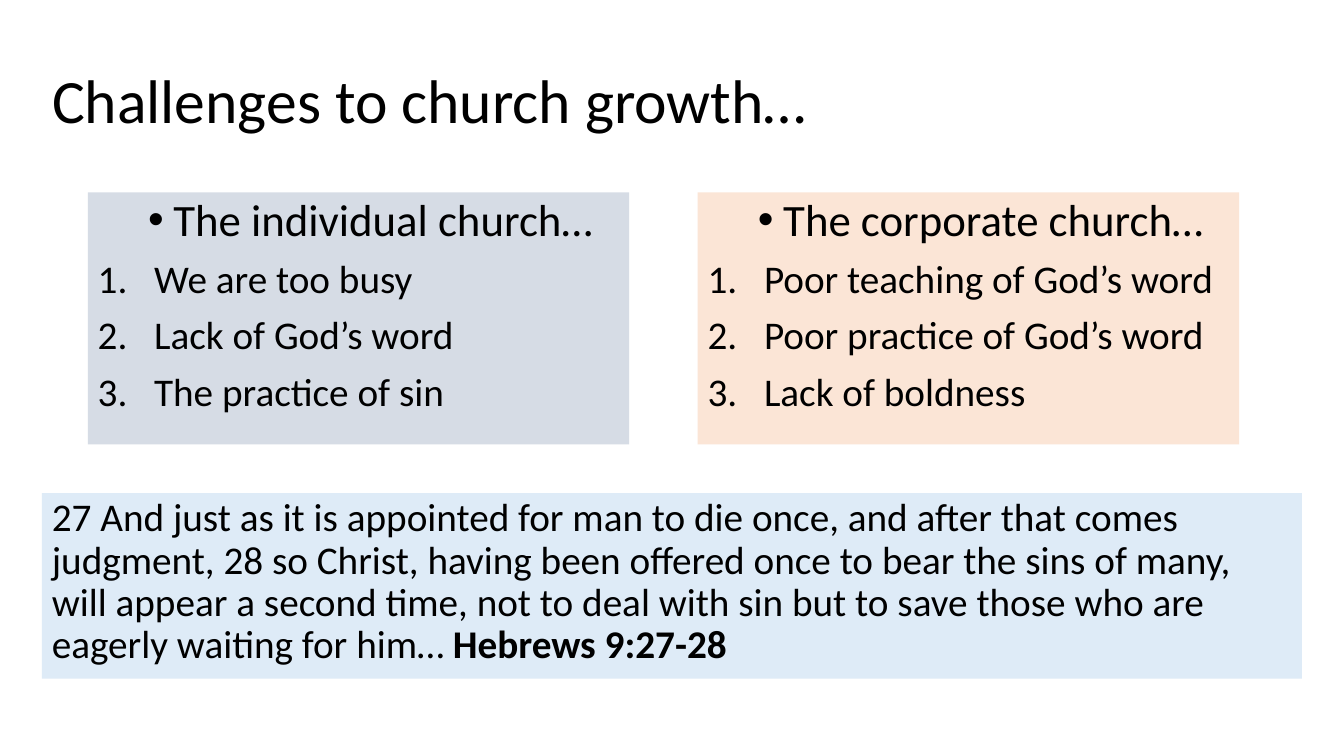
from dataclasses import dataclass

from lxml import etree
from pptx import Presentation
from pptx import util as u
from pptx.dml.color import RGBColor
from pptx.enum import shapes, text
from pptx.oxml.ns import qn


@dataclass(frozen=True)
class Theme:
    font: str = "Calibri"
    ink: str = "000000"
    individual: str = "D6DCE5"
    corporate: str = "FBE5D6"
    verse: str = "DEEBF7"
    title_size: int = 44
    heading_size: int = 32
    body_size: int = 28


class Deck:
    COLS, ROWS = 32, 18

    def __init__(self, theme):
        self.theme = theme
        self.prs = Presentation()
        self.prs.slide_width, self.prs.slide_height = u.Inches(13.33), u.Inches(7.5)
        self.s = self.prs.slides.add_slide(self.prs.slide_layouts[5])

    def box(self, col, row, cols, rows):
        """Turn grid columns and rows into left, top, width and height."""
        dx, dy = self.prs.slide_width / self.COLS, self.prs.slide_height / self.ROWS
        return [round(v) for v in (col * dx, row * dy, cols * dx, rows * dy)]

    def frame(self, sp, anchor):
        tf = sp.text_frame
        settings = {"word_wrap": True, "auto_size": text.MSO_AUTO_SIZE.NONE,
                    "vertical_anchor": anchor}
        for name, value in settings.items():
            setattr(tf, name, value)
        return tf

    def paragraph(self, p, runs, size, before=0):
        settings = {"alignment": text.PP_ALIGN.LEFT, "line_spacing": 0.9,
                    "space_before": u.Pt(before)}
        for name, value in settings.items():
            setattr(p, name, value)
        for words, bold in runs:
            r = p.add_run()
            r.text = words
            font = {"name": self.theme.font, "size": u.Pt(size), "bold": bold}
            for name, value in font.items():
                setattr(r.font, name, value)
            r.font.color.rgb = RGBColor.from_string(self.theme.ink)

    def bullet(self, p, margin, hanging, tag, **attrs):
        pPr = p._p.get_or_add_pPr()
        pPr.set("marL", str(u.Inches(margin)))
        pPr.set("indent", str(-u.Inches(hanging)))
        face = "Arial" if tag == "a:buChar" else "+mj-lt"
        etree.SubElement(pPr, qn("a:buFont"), typeface=face)
        etree.SubElement(pPr, qn(tag), **attrs)

    def title(self, words, *cells):
        sp = self.s.shapes.title
        sp.left, sp.top, sp.width, sp.height = self.box(*cells)
        tf = self.frame(sp, text.MSO_ANCHOR.MIDDLE)
        self.paragraph(tf.paragraphs[0], [(words, False)], self.theme.title_size)

    def panel(self, fill, *cells):
        sp = self.s.shapes.add_shape(shapes.MSO_SHAPE.RECTANGLE, *self.box(*cells))
        sp.shadow.inherit = False
        sp.fill.solid()
        sp.fill.fore_color.rgb = RGBColor.from_string(fill)
        sp.line.fill.background()
        return self.frame(sp, text.MSO_ANCHOR.TOP)

    def list_panel(self, heading, items, fill, *cells):
        tf = self.panel(fill, *cells)
        p = tf.paragraphs[0]
        p.level = 1
        self.paragraph(p, [(heading, False)], self.theme.heading_size, before=5)
        self.bullet(p, 0.75, 0.25, "a:buChar", char="•")
        for item in items:
            p = tf.add_paragraph()
            self.paragraph(p, [(item, False)], self.theme.body_size, before=10)
            self.bullet(p, 0.56, 0.56, "a:buAutoNum", type="arabicPeriod")

    def quote_panel(self, quote, reference, fill, *cells):
        tf = self.panel(fill, *cells)
        self.paragraph(tf.paragraphs[0], [(quote, False), (reference, True)],
                       self.theme.body_size, before=10)


def main():
    theme = Theme()
    deck = Deck(theme)

    # Title
    deck.title("Challenges to church growth…", 1, 0.94, 30, 3.07)

    # Two lists side by side
    lists = [
        ("The individual church…", theme.individual,
         ["We are too busy", "Lack of God’s word", "The practice of sin"]),
        ("The corporate church…", theme.corporate,
         ["Poor teaching of God’s word", "Poor practice of God’s word",
          "Lack of boldness"]),
    ]
    for i, (heading, fill, items) in enumerate(lists):
        deck.list_panel(heading, items, fill, 2.09 + i * 14.52, 4.58, 12.89, 6)

    # Bible verse
    deck.quote_panel(
        "27 And just as it is appointed for man to die once, and after that comes "
        "judgment, 28 so Christ, having been offered once to bear the sins of many, "
        "will appear a second time, not to deal with sin but to save those who are "
        "eagerly waiting for him… ",
        "Hebrews 9:27-28", theme.verse, 1, 11.74, 30, 4.42)

    deck.prs.save("out.pptx")


if __name__ == "__main__":
    main()
